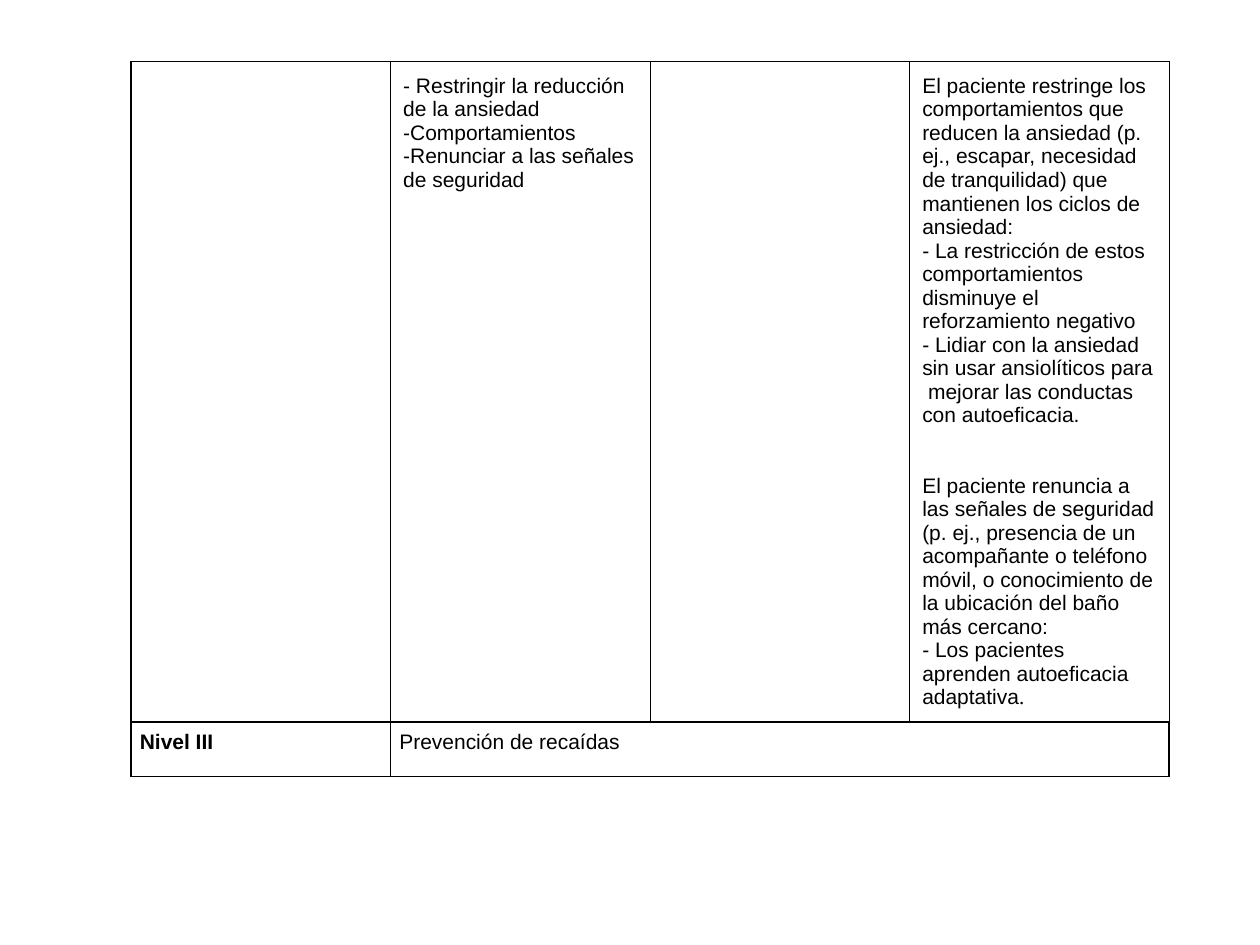
from dataclasses import dataclass

from lxml import etree
from pptx import Presentation
from pptx.dml.color import RGBColor
from pptx.oxml.ns import qn
from pptx.util import Inches, Pt


@dataclass(frozen=True)
class Theme:
    ink: str = "000000"
    font: str = "Arial"
    stop_font: str = "Times New Roman"
    size: float = 12
    section_gap: float = 26.9
    thin: float = 0.75
    thick: float = 1


THEME = Theme()
SLIDE_WIDTH, SLIDE_HEIGHT = 10, 7.5
LEFT, TOP = 1.04, 0.49
COLUMN_COUNT, COLUMN_WIDTH = 4, 2.06
ROW_HEIGHTS = (5.24, 0.43)
DETAIL_INSET, LEVEL_INSET = 0.1, 0.07

TECHNIQUES = (
    "- Restringir la reducción de la ansiedad",
    "-Comportamientos",
    "-Renunciar a las señales de seguridad",
)
RESTRICTION = (
    "El paciente restringe los comportamientos que reducen la ansiedad "
    "(p. ej., escapar, necesidad de tranquilidad) que mantienen los ciclos de ansiedad:",
    "- La restricción de estos comportamientos disminuye el reforzamiento negativo",
    "- Lidiar con la ansiedad sin usar ansiolíticos para  mejorar las conductas "
    "con autoeficacia.",
)
SAFETY_SIGNALS = (
    "El paciente renuncia a las señales de seguridad (p. ej., presencia de un "
    "acompañante o teléfono móvil, o conocimiento de la ubicación del baño más cercano:",
    "- Los pacientes aprenden autoeficacia adaptativa",
)


def set_borders(cell, width):
    properties = cell._tc.get_or_add_tcPr()
    for position, side in enumerate(("lnL", "lnR", "lnT", "lnB")):
        line = etree.Element(qn(f"a:{side}"), w=str(Pt(width)))
        fill = etree.SubElement(line, qn("a:solidFill"))
        etree.SubElement(fill, qn("a:srgbClr"), val=THEME.ink)
        properties.insert(position, line)


def style_font(font, bold=False):
    font.name = THEME.font
    font.size = Pt(THEME.size)
    font.bold = bold
    font.color.rgb = RGBColor.from_string(THEME.ink)


def write_cell(cell, lines, inset, bold=False):
    cell.margin_left = cell.margin_right = Inches(inset)
    cell.margin_top = cell.margin_bottom = Inches(inset)
    frame = cell.text_frame
    for index, line in enumerate(lines):
        para = frame.add_paragraph() if index else frame.paragraphs[0]
        para.add_run().text = line
        style_font(para.font, bold)
    return frame.paragraphs


def add_grid(page):
    frame = page.shapes.add_table(
        len(ROW_HEIGHTS), COLUMN_COUNT, Inches(LEFT), Inches(TOP),
        Inches(COLUMN_COUNT * COLUMN_WIDTH), Inches(sum(ROW_HEIGHTS)))
    table = frame.table
    table.first_row = table.horz_banding = False
    for column in table.columns:
        column.width = Inches(COLUMN_WIDTH)
    for row, height, width in zip(table.rows, ROW_HEIGHTS, (THEME.thin, THEME.thick)):
        row.height = Inches(height)
        for cell in row.cells:
            cell.fill.background()
            set_borders(cell, width)
            style_font(cell.text_frame.paragraphs[0].font)
    table.cell(1, 1).merge(table.cell(1, COLUMN_COUNT - 1))
    return table


def fill_details(table):
    write_cell(table.cell(0, 1), TECHNIQUES, DETAIL_INSET)
    paras = write_cell(table.cell(0, 3), RESTRICTION + SAFETY_SIGNALS, DETAIL_INSET)
    paras[len(RESTRICTION)].space_before = Pt(THEME.section_gap)
    stop = paras[-1].add_run()
    stop.text = "."
    stop.font.name = THEME.stop_font


def fill_level(table):
    write_cell(table.cell(1, 0), ["Nivel III"], LEVEL_INSET, bold=True)
    write_cell(table.cell(1, 1), ["Prevención de recaídas"], LEVEL_INSET)


def main():
    deck = Presentation()
    deck.slide_width, deck.slide_height = Inches(SLIDE_WIDTH), Inches(SLIDE_HEIGHT)
    page = deck.slides.add_slide(deck.slide_layouts[6])
    table = add_grid(page)
    fill_details(table)
    fill_level(table)
    deck.save("out.pptx")


if __name__ == "__main__":
    main()
